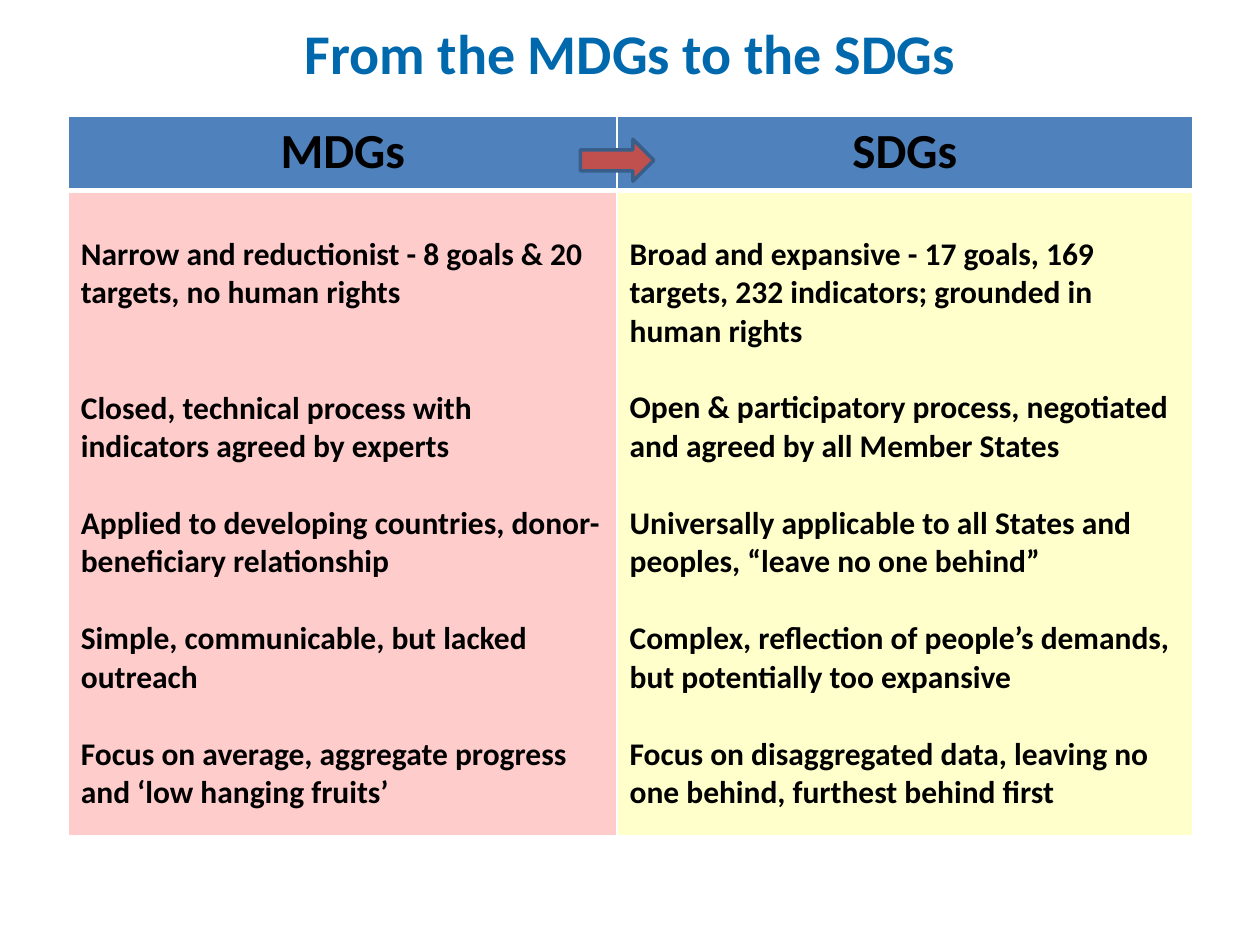
"""Build a slide that compares the MDGs with the SDGs."""
from dataclasses import dataclass

from lxml import etree
from pptx import Presentation
from pptx.dml.color import RGBColor
from pptx.enum import shapes, text
from pptx.oxml import ns
from pptx.util import Pt

COLORS = {
    "title": "0068AD",
    "text": "000000",
    "header": "4F81BD",
    "mdgs": "FFCCCC",
    "sdgs": "FFFFCC",
    "arrow": "C0504D",
    "outline": "395E89",
    "rule": "FFFFFF",
}
FONT = "Calibri"
LINE = 22
THIN, THICK = 1, 3


@dataclass(frozen=True)
class Goals:
    heading: str
    color: str
    width: float
    points: tuple[str, ...]
    gaps: tuple[float, ...]


COLUMNS = (
    Goals("MDGs", "mdgs", 313.6, (
        "Narrow and reductionist - 8 goals & 20 targets, no human rights",
        "Closed, technical process with indicators agreed by experts",
        "Applied to developing countries, donor-beneficiary relationship",
        "Simple, communicable, but lacked outreach",
        "Focus on average, aggregate progress and ‘low hanging fruits’",
    ), (0, 2 * LINE, LINE, LINE, LINE)),
    Goals("SDGs", "sdgs", 328.8, (
        "Broad and expansive - 17 goals, 169 targets, 232 indicators; grounded in human rights",
        "Open & participatory process, negotiated and agreed by all Member States",
        "Universally applicable to all States and peoples, “leave no one behind”",
        "Complex, reflection of people’s demands, but potentially too expansive",
        "Focus on disaggregated data, leaving no one behind, furthest behind first",
    ), (0, LINE, LINE, LINE, LINE)),
)


def rgb(name: str) -> RGBColor:
    """Return a named colour."""
    return RGBColor.from_string(COLORS[name])


def write(paragraph, words: str, *, size: float, color: str = "text",
          align=text.PP_ALIGN.LEFT, before: float = 0) -> None:
    """Write bold text into a paragraph."""
    paragraph.alignment = align
    if before:
        paragraph.space_before = Pt(before)
    run = paragraph.add_run()
    run.text = words
    run.font.name, run.font.size, run.font.bold = FONT, Pt(size), True
    run.font.color.rgb = rgb(color)


def style_cell(cell, color: str, top: float, bottom: float) -> None:
    """Give a cell its borders, then its fill."""
    properties = cell._tc.get_or_add_tcPr()
    for side, width in (("L", THIN), ("R", THIN), ("T", top), ("B", bottom)):
        border = etree.SubElement(properties, ns.qn(f"a:ln{side}"), w=str(int(Pt(width))))
        fill = etree.SubElement(border, ns.qn("a:solidFill"))
        etree.SubElement(fill, ns.qn("a:srgbClr"), val=COLORS["rule"])
    cell.fill.solid()
    cell.fill.fore_color.rgb = rgb(color)


def add_title(slide, words: str) -> None:
    """Place the title across the top of the slide."""
    title = slide.shapes.title
    title.left, title.top, title.width, title.height = Pt(0), Pt(0), Pt(720), Pt(60)
    title.text_frame.vertical_anchor = text.MSO_ANCHOR.MIDDLE
    write(title.text_frame.paragraphs[0], words, size=32, color="title",
          align=text.PP_ALIGN.CENTER)


def add_comparison(slide, columns: tuple[Goals, ...]) -> None:
    """Draw the table with one column for each set of goals."""
    heights = (42.6, 368.8)
    width = sum(goals.width for goals in columns)
    table = slide.shapes.add_table(len(heights), len(columns), Pt(39), Pt(66.2),
                                   Pt(width), Pt(sum(heights))).table
    for row, height in zip(table.rows, heights):
        row.height = Pt(height)
    for index, goals in enumerate(columns):
        table.columns[index].width = Pt(goals.width)
        heading, body = table.cell(0, index), table.cell(1, index)
        style_cell(heading, "header", THIN, THICK)
        style_cell(body, goals.color, THICK, THIN)
        write(heading.text_frame.paragraphs[0], goals.heading, size=28,
              align=text.PP_ALIGN.CENTER)
        body.margin_top = Pt(3.6 + LINE)
        for number, (point, gap) in enumerate(zip(goals.points, goals.gaps)):
            frame = body.text_frame
            paragraph = frame.add_paragraph() if number else frame.paragraphs[0]
            write(paragraph, point, size=18, before=gap)


def add_arrow(slide) -> None:
    """Draw the arrow from one heading to the other."""
    arrow = slide.shapes.add_shape(shapes.MSO_SHAPE.RIGHT_ARROW,
                                   Pt(331.7), Pt(79.6), Pt(42), Pt(24))
    arrow.shadow.inherit = False
    arrow.fill.solid()
    arrow.fill.fore_color.rgb = rgb("arrow")
    arrow.line.color.rgb = rgb("outline")
    arrow.line.width = Pt(2)


def main() -> None:
    """Build and save the slide."""
    deck = Presentation()
    deck.slide_width, deck.slide_height = Pt(720), Pt(540)
    slide = deck.slides.add_slide(deck.slide_layouts[5])
    add_title(slide, "From the MDGs to the SDGs")
    add_comparison(slide, COLUMNS)
    add_arrow(slide)
    deck.save("out.pptx")


if __name__ == "__main__":
    main()
